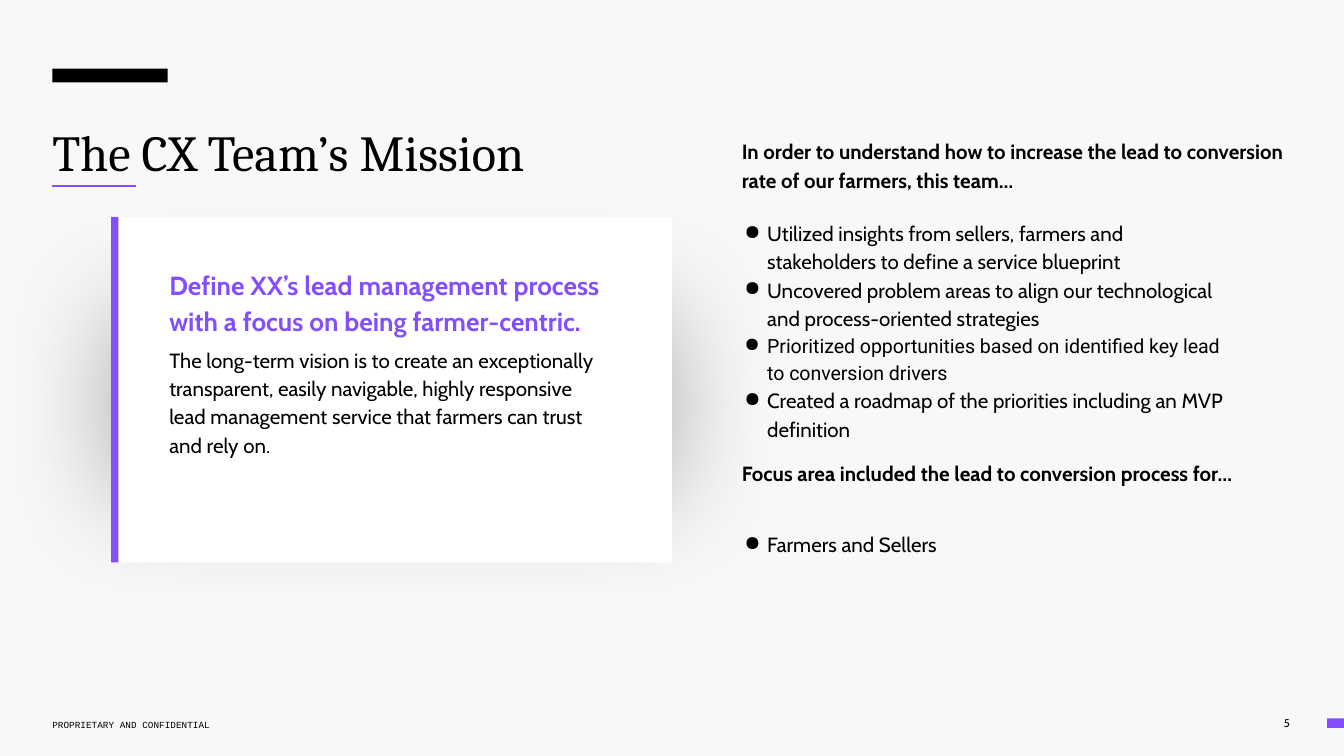
from lxml import etree
from pptx import Presentation
from pptx.dml.color import RGBColor
from pptx.enum.shapes import MSO_CONNECTOR, MSO_SHAPE
from pptx.enum.text import MSO_ANCHOR, PP_ALIGN
from pptx.oxml import parse_xml
from pptx.oxml.ns import nsdecls, qn
from pptx.util import Cm, Pt

RECTANGLE = MSO_SHAPE.RECTANGLE
STRAIGHT = MSO_CONNECTOR.STRAIGHT
TOP, MIDDLE = MSO_ANCHOR.TOP, MSO_ANCHOR.MIDDLE
LEFT, RIGHT = PP_ALIGN.LEFT, PP_ALIGN.RIGHT

BLACK = RGBColor(0x00, 0x00, 0x00)
WHITE = RGBColor(0xFF, 0xFF, 0xFF)
PURPLE = RGBColor(0x83, 0x4E, 0xFF)
BACKGROUND = RGBColor(0xF8, 0xF8, 0xF8)


def style(text, size=11, font="Cabin", color=BLACK, bold=False):
    return {"text": text, "size": size, "font": font, "color": color, "bold": bold}


# Content
TITLE = [style("The CX Team’s Mission", 27, "Cambria")]
MISSION = [
    style("Define XX’s lead management process with a focus on being farmer-centric.",
          14, color=PURPLE, bold=True),
    style("The long-term vision is to create an exceptionally transparent, easily navigable, "
          "highly responsive lead management service that farmers can trust and rely on."),
]
INTRO = [style("In order to understand how to increase the lead to conversion rate "
               "of our farmers, this team…", bold=True)]
ACTIONS = [
    style("Utilized insights from sellers, farmers and stakeholders to define a service blueprint"),
    style("Uncovered problem areas to align our technological and process-oriented strategies"),
    style("Prioritized opportunities based on identified key lead to conversion drivers",
          10.5, "Roboto"),
    style("Created a roadmap of the priorities including an MVP definition"),
]
FOCUS = [style("Focus area included the lead to conversion process for…", bold=True)]
AUDIENCE = [style("Farmers and Sellers")]
FOOTER = [style("PROPRIETARY AND CONFIDENTIAL", 5, "Courier New")]
PAGE_NUMBER = [style("5", 6)]

# Layout in centimetres
SLIDE_WIDTH, SLIDE_HEIGHT = 25.4, 14.29
MARGIN = 0.99
RIGHT_COLUMN = 14.02
HEADING_WIDTH, LIST_WIDTH = 10.49, 9.27
CARD_LEFT, CARD_TOP, CARD_WIDTH, CARD_HEIGHT = 2.1, 4.1, 10.6, 6.53
SHADOW_TOP, SHADOW_HEIGHT = 5.11, 3.63
ACCENT_WIDTH = 0.14
UNDERLINE_TOP, UNDERLINE_WIDTH = 3.52, 1.58

presentation = Presentation()
presentation.slide_width = Cm(SLIDE_WIDTH)
presentation.slide_height = Cm(SLIDE_HEIGHT)
slide = presentation.slides.add_slide(presentation.slide_layouts[6])
slide.background.fill.solid()
slide.background.fill.fore_color.rgb = BACKGROUND


def add_rectangle(left, top, width, height, color):
    shape = slide.shapes.add_shape(RECTANGLE, Cm(left), Cm(top), Cm(width), Cm(height))
    shape.shadow.inherit = False
    shape.fill.solid()
    shape.fill.fore_color.rgb = color
    shape.line.fill.background()
    return shape


def add_soft_shadow(shape):
    effects = shape._element.spPr.find(qn("a:effectLst"))
    effects.append(parse_xml(
        f'<a:outerShdw {nsdecls("a")} blurRad="{Pt(60)}" dist="{Pt(20)}" dir="5400000" '
        'algn="bl" rotWithShape="0"><a:srgbClr val="000000"><a:alpha val="30000"/>'
        '</a:srgbClr></a:outerShdw>'))


def add_bullet(paragraph):
    properties = paragraph._p.get_or_add_pPr()
    properties.set("marL", str(Cm(0.48)))
    properties.set("indent", str(-Cm(0.43)))
    color = etree.SubElement(properties, qn("a:buClr"))
    etree.SubElement(color, qn("a:srgbClr")).set("val", str(BLACK))
    etree.SubElement(properties, qn("a:buChar")).set("char", "●")


def add_text(paragraphs, left, top, width, height, spacing=1.15, gap=0,
             bullets=False, align=LEFT, anchor=TOP, inset=0):
    frame = slide.shapes.add_textbox(Cm(left), Cm(top), Cm(width), Cm(height)).text_frame
    frame.word_wrap = True
    frame.vertical_anchor = anchor
    frame.margin_left = frame.margin_right = Cm(inset)
    frame.margin_top = frame.margin_bottom = Cm(inset / 2)
    for index, content in enumerate(paragraphs):
        paragraph = frame.add_paragraph() if index else frame.paragraphs[0]
        if bullets:
            add_bullet(paragraph)
        paragraph.alignment = align
        paragraph.line_spacing = spacing
        paragraph.space_before = Pt(gap if index else 0)
        run = paragraph.add_run()
        run.text = content["text"]
        run.font.size = Pt(content["size"])
        run.font.name = content["font"]
        run.font.bold = content["bold"]
        run.font.color.rgb = content["color"]


# Plain block in the logo position
add_rectangle(MARGIN, 1.3, 2.18, 0.26, BLACK)

# Title and underline
add_text(TITLE, MARGIN, 2.36, 12.55, 1.32, spacing=0.97)
underline = slide.shapes.add_connector(
    STRAIGHT, Cm(MARGIN), Cm(UNDERLINE_TOP),
    Cm(MARGIN + UNDERLINE_WIDTH), Cm(UNDERLINE_TOP))
underline.line.color.rgb = PURPLE
underline.line.width = Pt(1)
etree.SubElement(underline._element.spPr, qn("a:effectLst"))

# Mission card
add_soft_shadow(add_rectangle(CARD_LEFT, SHADOW_TOP, CARD_WIDTH, SHADOW_HEIGHT, WHITE))
add_rectangle(CARD_LEFT, CARD_TOP, CARD_WIDTH, CARD_HEIGHT, WHITE)
add_rectangle(CARD_LEFT, CARD_TOP, ACCENT_WIDTH, CARD_HEIGHT, PURPLE)
add_text(MISSION, 3.2, 5, 8.38, 5.11, gap=4)

# Right column
add_text(INTRO, RIGHT_COLUMN, 2.54, HEADING_WIDTH, 1.57, spacing=1.18)
add_text(ACTIONS, RIGHT_COLUMN, 4.11, LIST_WIDTH, 3.99, bullets=True)
add_text(FOCUS, RIGHT_COLUMN, 8.64, HEADING_WIDTH, 2.08, spacing=1.18)
add_text(AUDIENCE, RIGHT_COLUMN, 9.98, LIST_WIDTH, 1.85, spacing=1.18, bullets=True)

# Footer
add_text(FOOTER, MARGIN, 13.49, 5.54, 0.38, anchor=MIDDLE)
add_text(PAGE_NUMBER, 22.48, 13.44, 2.08, 0.46, spacing=1,
         align=RIGHT, anchor=MIDDLE, inset=0.18)
add_rectangle(25.08, 13.58, 0.32, 0.18, PURPLE)

presentation.save("out.pptx")
